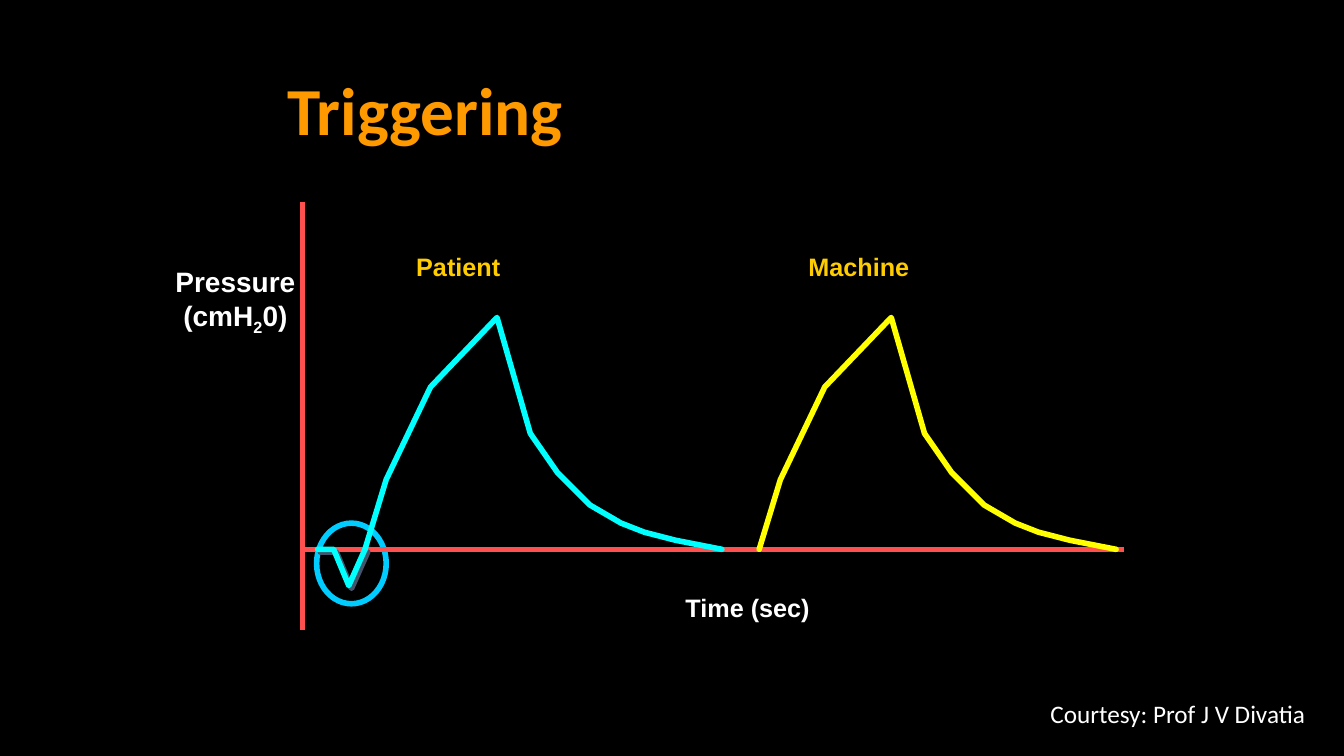
from dataclasses import dataclass

import lxml.etree
import pptx
import pptx.dml.color
import pptx.enum.shapes
import pptx.enum.text
import pptx.oxml.ns
import pptx.util

Inches = pptx.util.Inches
Pt = pptx.util.Pt
RGB = pptx.dml.color.RGBColor.from_string
qn = pptx.oxml.ns.qn
Align = pptx.enum.text.PP_ALIGN


@dataclass(frozen=True)
class Theme:
    background: str = "000000"
    title: str = "FF9900"
    text: str = "FFFFFF"
    label: str = "FFCC00"
    axis: str = "FF5050"
    patient: str = "00FFFF"
    machine: str = "FFFF00"
    circle: str = "00CCFF"
    shadow: str = "44546A"
    title_shadow: str = "7F7F7F"
    heading_font: str = "Calibri"
    label_font: str = "Arial"
    title_size: int = 48
    axis_size: int = 20
    label_size: int = 18
    line_width: int = 4


theme = Theme()
presentation = pptx.Presentation()
presentation.slide_width = Inches(13.33)
presentation.slide_height = Inches(7.5)
slide = presentation.slides.add_slide(presentation.slide_layouts[6])
slide.background.fill.solid()
slide.background.fill.fore_color.rgb = RGB(theme.background)


def add_text(text, box, font, size, color, bold=True, align=Align.LEFT, wrap=True):
    shape = slide.shapes.add_textbox(*map(Inches, box))
    shape.text_frame.word_wrap = wrap
    paragraph = shape.text_frame.paragraphs[0]
    paragraph.alignment = align
    paragraph.font.name = font
    paragraph.font.size = Pt(size)
    paragraph.font.bold = bold
    paragraph.font.color.rgb = RGB(color)
    paragraph.add_run().text = text
    return shape


def add_curve(points, color):
    points = [(Inches(x), Inches(y)) for x, y in points]
    builder = slide.shapes.build_freeform(*points[0], scale=1.0)
    builder.add_line_segments(points[1:], close=False)
    shape = builder.convert_to_shape()
    shape.shadow.inherit = False
    shape.fill.background()
    shape.line.color.rgb = RGB(color)
    shape.line.width = Pt(theme.line_width)
    outline = shape.line._get_or_add_ln()
    outline.set("cap", "rnd")
    lxml.etree.SubElement(outline, qn("a:round"))
    return shape


# Circle around the trigger effort
circle = slide.shapes.add_shape(
    pptx.enum.shapes.MSO_SHAPE.OVAL, Inches(3.14), Inches(5.19), Inches(0.69), Inches(0.8))
circle.shadow.inherit = False
circle.fill.background()
circle.line.color.rgb = RGB(theme.circle)
circle.line.width = Pt(theme.line_width)

# Title
title = add_text("Triggering", (2.75, 0.5, 8.5, 1.25),
                 theme.heading_font, theme.title_size, theme.title)
title.text_frame.vertical_anchor = pptx.enum.text.MSO_ANCHOR.MIDDLE
title_paragraph = title.text_frame.paragraphs[0]
title_paragraph.line_spacing = 0.9

# Axes
baseline = 5.45
for start, end in (((3, 2), (3, 6.25)), ((3, baseline), (11.15, baseline))):
    axis = slide.shapes.add_connector(
        pptx.enum.shapes.MSO_CONNECTOR.STRAIGHT, *map(Inches, start + end))
    axis.line.color.rgb = RGB(theme.axis)
    axis.line.width = Pt(theme.line_width)
    lxml.etree.SubElement(axis._element.spPr, qn("a:effectLst"))

# Trigger dip
dip = add_curve([(3.15, baseline), (3.31, baseline), (3.46, 5.81), (3.62, baseline)],
                theme.patient)

# Patient and machine breaths share one pressure curve
breath = [(0, 0), (0.21, 0.69), (0.65, 1.61), (1.31, 2.3), (1.64, 1.15), (1.91, 0.76),
          (2.23, 0.44), (2.54, 0.26), (2.77, 0.17), (3.08, 0.09), (3.54, 0)]
for start, color in ((3.62, theme.patient), (7.53, theme.machine)):
    add_curve([(start + time, baseline - pressure) for time, pressure in breath], color)

# Shadows on the dip and the title
title_properties = title_paragraph.runs[0].font._element
title_effects = lxml.etree.SubElement(title_properties, qn("a:effectLst"))
dip_effects = dip._element.spPr.find(qn("a:effectLst"))
for effects, color, distance in ((dip_effects, theme.shadow, 2.8),
                                 (title_effects, theme.title_shadow, 2)):
    shadow = lxml.etree.SubElement(effects, qn("a:outerShdw"), dist=str(Pt(distance)),
                                   dir="2700000", algn="ctr", rotWithShape="0")
    lxml.etree.SubElement(shadow, qn("a:srgbClr"), val=color)

# Breath labels
for name, left, width in (("Patient", 4.03, 1.04), ("Machine", 7.92, 1.21)):
    add_text(name, (left, 2.44, width, 0.4), theme.label_font, theme.label_size,
             theme.label, wrap=False)

# Axis labels
add_text("Time (sec)", (6.25, 5.83, 2.33, 0.4), theme.label_font, theme.label_size,
         theme.text, align=Align.CENTER)
pressure_label = add_text("Pressure (cmH", (1.17, 2.58, 2.33, 0.77), theme.label_font,
                          theme.axis_size, theme.text, align=Align.CENTER)
pressure_paragraph = pressure_label.text_frame.paragraphs[0]
subscript = pressure_paragraph.add_run()
subscript.text = "2"
subscript.font._element.set("baseline", "-25000")
pressure_paragraph.add_run().text = "0)"

# Credit
add_text("Courtesy: Prof J V Divatia", (10.32, 6.88, 2.8, 0.4), theme.heading_font,
         theme.label_size, theme.text, bold=False)

presentation.save("out.pptx")
